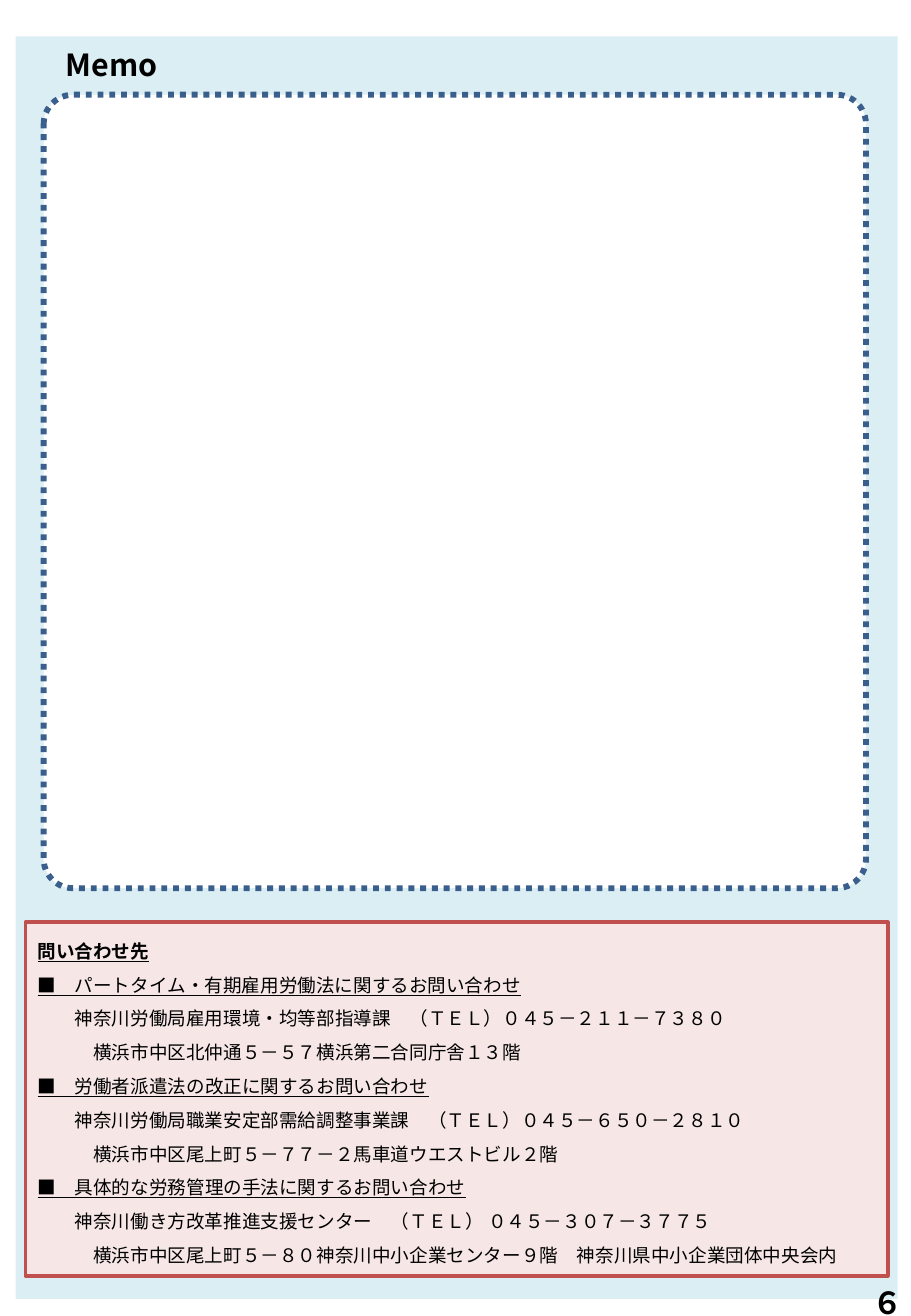
import pptx
import pptx.util
import pptx.dml.color
import pptx.enum.dml
import pptx.enum.shapes
import pptx.enum.text
from dataclasses import dataclass
from lxml import etree
from pptx.oxml.ns import qn

Inches = pptx.util.Inches
Pt = pptx.util.Pt
RGBColor = pptx.dml.color.RGBColor
Align = pptx.enum.text.PP_ALIGN
Anchor = pptx.enum.text.MSO_ANCHOR
Kind = pptx.enum.shapes.MSO_SHAPE

FONT = "Noto Sans CJK JP"
BLACK = RGBColor(0x00, 0x00, 0x00)
WHITE = RGBColor(0xFF, 0xFF, 0xFF)
SKY = RGBColor(0xDB, 0xEE, 0xF4)
PINK = RGBColor(0xF6, 0xE7, 0xE6)
RED = RGBColor(0xC0, 0x50, 0x4D)
NAVY = RGBColor(0x3A, 0x5F, 0x8C)
EM = 11 / 72  # width of one full-width character, in inches


@dataclass
class Box:
    left: float
    top: float
    width: float
    height: float


@dataclass
class Desk:
    topic: str
    office: str
    place: str


DESKS = [
    Desk("パートタイム・有期雇用労働法に関するお問い合わせ",
         "神奈川労働局雇用環境・均等部指導課　（ＴＥＬ）０４５－２１１－７３８０",
         "横浜市中区北仲通５－５７横浜第二合同庁舎１３階"),
    Desk("労働者派遣法の改正に関するお問い合わせ",
         "神奈川労働局職業安定部需給調整事業課　（ＴＥＬ）０４５－６５０－２８１０",
         "横浜市中区尾上町５－７７－２馬車道ウエストビル２階"),
    Desk("具体的な労務管理の手法に関するお問い合わせ",
         "神奈川働き方改革推進支援センター　（ＴＥＬ） ０４５－３０７－３７７５",
         "横浜市中区尾上町５－８０神奈川中小企業センター９階　神奈川県中小企業団体中央会内"),
]


def place(shape, box: Box) -> None:
    shape.left, shape.top = Inches(box.left), Inches(box.top)
    shape.width, shape.height = Inches(box.width), Inches(box.height)


def panel(slide, kind, box: Box, fill: RGBColor):
    shape = slide.shapes.add_shape(kind, 0, 0, 0, 0)
    place(shape, box)
    shape.shadow.inherit = False
    shape.fill.solid()
    shape.fill.fore_color.rgb = fill
    shape.line.fill.background()
    return shape


def border(shape, color: RGBColor, width: float) -> None:
    shape.line.color.rgb = color
    shape.line.width = Pt(width)


def frame(shape, anchor, side: float, top: float, foot: float) -> None:
    body = shape.text_frame
    body.word_wrap = True
    body.auto_size = pptx.enum.text.MSO_AUTO_SIZE.NONE
    body.vertical_anchor = anchor
    body.margin_left = body.margin_right = Inches(side)
    body.margin_top, body.margin_bottom = Inches(top), Inches(foot)


def style(para, size: float, align, bold: bool = False, under: bool = False) -> None:
    para.alignment = align
    for run in para.runs:
        font = run.font
        font.size, font.bold, font.underline = Pt(size), bold, under
        font.color.rgb = BLACK
        font.name = FONT
        etree.SubElement(font.element if hasattr(font, "element") else run._r.get_or_add_rPr(),
                         qn("a:ea"), typeface=FONT)


def indent(para, steps: int) -> None:
    props = para._p.get_or_add_pPr()
    props.set("marL", str(Inches(steps * EM)))
    props.set("indent", "0")
    etree.SubElement(props, qn("a:buNone"))


def contacts(body) -> None:
    lines = [("問い合わせ先", 0)]
    for desk in DESKS:
        lines += [("■　" + desk.topic, 0), (desk.office, 2), (desk.place, 3)]
    body.text_frame.text = "\n".join(text for text, _ in lines)
    for row, (para, (_, steps)) in enumerate(zip(body.text_frame.paragraphs, lines)):
        para.line_spacing = Pt(20)
        para.space_before = para.space_after = Pt(0)
        indent(para, steps)
        style(para, 11, Align.LEFT, bold=row == 0, under=steps == 0)


def main() -> None:
    deck = pptx.Presentation()
    deck.slide_width, deck.slide_height = Inches(7.5), Inches(10.83)
    slide = deck.slides.add_slide(deck.slide_layouts[1])
    title, body = slide.placeholders[0], slide.placeholders[1]

    # Background and memo area
    panel(slide, Kind.RECTANGLE, Box(0.13, 0.3, 7.26, 10.39), SKY)
    memo = panel(slide, Kind.ROUNDED_RECTANGLE, Box(0.36, 0.78, 6.77, 6.53), WHITE)
    memo.adjustments[0] = 0.037
    border(memo, NAVY, 3.5)
    memo.line.dash_style = pptx.enum.dml.MSO_LINE.ROUND_DOT

    # Placeholders go in front of the background
    for holder in (body, title):
        holder.element.getparent().append(holder.element)

    # Contact list
    place(body, Box(0.21, 7.59, 7.1, 2.91))
    body.fill.solid()
    body.fill.fore_color.rgb = PINK
    border(body, RED, 2.25)
    frame(body, Anchor.TOP, 0.1, 0.05, 0)
    contacts(body)

    # Heading
    place(title, Box(0.21, 0.38, 1.42, 0.4))
    frame(title, Anchor.TOP, 0.1, 0, 0)
    title.text_frame.text = "Memo"
    style(title.text_frame.paragraphs[0], 18, Align.CENTER, bold=True)

    # Page number
    page = slide.shapes.add_textbox(0, 0, 0, 0)
    place(page, Box(5.78, 10.43, 1.75, 0.58))
    frame(page, Anchor.MIDDLE, 0.1, 0.05, 0.05)
    page.text_frame.text = "６"
    style(page.text_frame.paragraphs[0], 18, Align.RIGHT, bold=True)

    deck.save("out.pptx")


if __name__ == "__main__":
    main()
